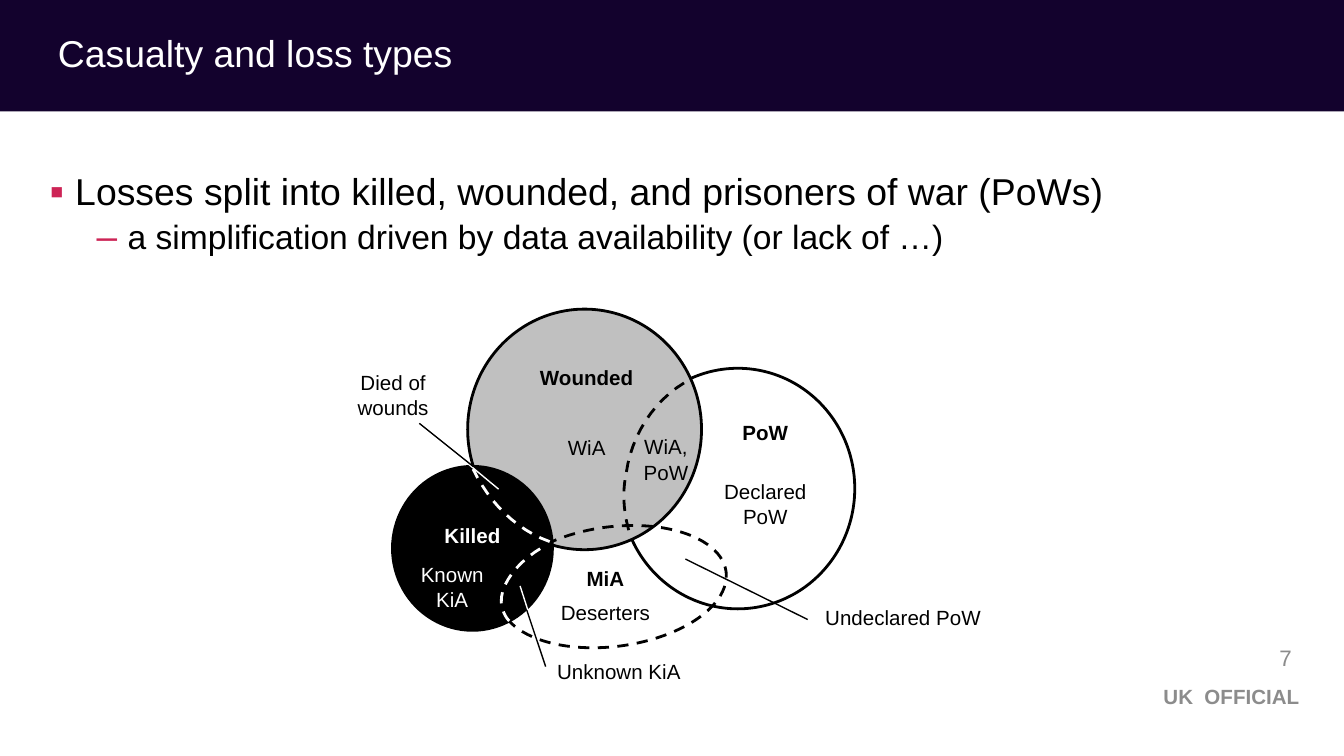
"""Build the slide on casualty and loss types with its overlapping sets."""
from lxml.etree import SubElement
from pptx import Presentation
from pptx.dml.color import RGBColor
from pptx.enum.dml import MSO_LINE
from pptx.enum.shapes import MSO_CONNECTOR, MSO_SHAPE
from pptx.enum.text import MSO_ANCHOR, PP_ALIGN
from pptx.oxml.ns import qn
from pptx.util import Inches, Pt

NAVY = RGBColor(0x13, 0x02, 0x2D)
CRIMSON = RGBColor(0xCD, 0x24, 0x56)
SILVER = RGBColor(0xC0, 0xC0, 0xC0)
GREY = RGBColor(0x8C, 0x8C, 0x8C)
BLACK = RGBColor(0, 0, 0)
WHITE = RGBColor(0xFF, 0xFF, 0xFF)

TITLE = {"size": Pt(20)}
NUMBER = {"size": Pt(12)}
LABEL = {"size": Pt(11)}
HEADING = {"size": Pt(11), "bold": True}
LABEL_SPACING = {"alignment": PP_ALIGN.CENTER, "line_spacing": Pt(13.5)}
RIGHT = {"alignment": PP_ALIGN.RIGHT}

BULLETS = [
    ("Losses split into killed, wounded, and prisoners of war (PoWs)",
     "▪", 0.19, -0.19, {"level": 0, "line_spacing": 0.9}, {"size": Pt(20)}),
    ("a simplification driven by data availability (or lack of …)",
     "–", 0.58, -0.23,
     {"level": 1, "line_spacing": 0.9, "space_before": Pt(3.8)}, {"size": Pt(18)}),
]

POW_SET = (4.62, 2.74, 1.74, 1.79)
WOUNDED_SET = (3.48, 2.3, 1.74, 1.79)
KILLED_SET = (2.92, 3.47, 1.19, 1.22)
MISSING_SET = (3.71, 3.92, 1.7, 0.89)

HIDDEN_EDGES = [
    (WHITE, (4.09, 4.03), [((3.84, 3.94), (3.64, 3.74), (3.52, 3.49))]),
    (BLACK, (5.09, 2.85), [((4.86, 2.99), (4.7, 3.24), (4.66, 3.52)),
                           ((4.63, 3.66), (4.64, 3.81), (4.68, 3.95))]),
    (WHITE, (3.79, 4.62), [((3.77, 4.6), (3.76, 4.58), (3.75, 4.56)),
                           ((3.68, 4.42), (3.8, 4.21), (4.04, 4.07))]),
]

LEADERS = [
    (WHITE, (3.12, 3.15), (3.71, 3.64)),
    (BLACK, (3.12, 3.15), (3.52, 3.47)),
    (BLACK, (5.1, 4.16), (6.01, 4.61)),
    (WHITE, (3.87, 4.36), (3.95, 4.61)),
    (BLACK, (4.06, 4.96), (3.92, 4.54)),
]

LABELS = [
    ("MiA", (4.19, 4.16, 0.63, 0.33), BLACK, HEADING),
    ("Wounded", (3.79, 2.66, 1.15, 0.33), BLACK, HEADING),
    ("Killed", (3.12, 3.84, 0.79, 0.33), WHITE, HEADING),
    ("PoW", (5.26, 3.07, 0.87, 0.33), BLACK, HEADING),
    ("Known KiA", (3.01, 4.13, 0.71, 0.57), WHITE, LABEL),
    ("WiA", (4.07, 3.18, 0.59, 0.28), BLACK, LABEL),
    ("WiA, PoW", (4.66, 3.18, 0.59, 0.53), BLACK, LABEL),
    ("Declared PoW", (5.26, 3.51, 0.87, 0.49), BLACK, LABEL),
    ("Undeclared PoW", (5.97, 4.45, 1.5, 0.28), BLACK, LABEL),
    ("Died of wounds", (2.53, 2.7, 0.79, 0.49), BLACK, LABEL),
    ("Deserters", (3.99, 4.41, 1.03, 0.28), BLACK, LABEL),
    ("Unknown KiA", (3.99, 4.85, 1.23, 0.28), BLACK, LABEL),
]


def apply_format(target, values):
    for name, value in values.items():
        setattr(target, name, value)


def write(para, text, color, font):
    span = para.add_run()
    span.text = text
    apply_format(span.font, {"name": "Arial", **font})
    span.font.color.rgb = color


def add_frame(page, place, frame_format=None):
    frame = page.shapes.add_textbox(*map(Inches, place)).text_frame
    apply_format(frame, {"word_wrap": True, **(frame_format or {})})
    return frame


def add_text(page, text, place, color, font, spacing, frame_format=None):
    para = add_frame(page, place, frame_format).paragraphs[0]
    apply_format(para, spacing)
    write(para, text, color, font)


def add_bullet(para, text, mark, margin, indent, spacing, font):
    properties = para._p.get_or_add_pPr()
    properties.set("marL", str(Inches(margin)))
    properties.set("indent", str(Inches(indent)))
    bullet_color = SubElement(properties, qn("a:buClr"))
    SubElement(bullet_color, qn("a:srgbClr"), val=str(CRIMSON))
    SubElement(properties, qn("a:buSzPct"), val="110000")
    SubElement(properties, qn("a:buFont"), typeface="Arial")
    SubElement(properties, qn("a:buChar"), char=mark)
    apply_format(para, spacing)
    write(para, text, BLACK, font)


def add_bullets(page):
    margins = {"margin_left": Inches(0.09), "margin_right": Inches(0.09)}
    frame = add_frame(page, (0.28, 1.24, 9.44, 4.09), margins)
    for index, bullet in enumerate(BULLETS):
        para = frame.add_paragraph() if index else frame.paragraphs[0]
        add_bullet(para, *bullet)


def paint(shape, fill=None, line=None, dashed=False):
    shape.shadow.inherit = False
    if fill is None:
        shape.fill.background()
    else:
        shape.fill.solid()
        shape.fill.fore_color.rgb = fill
    if line is None:
        shape.line.fill.background()
    else:
        shape.line.color.rgb = line
        shape.line.width = Pt(1.5)
    if dashed:
        shape.line.dash_style = MSO_LINE.DASH


def add_set(page, place, fill=None, rotation=0, dashed=False):
    oval = page.shapes.add_shape(MSO_SHAPE.OVAL, *map(Inches, place))
    oval.rotation = rotation
    paint(oval, fill, BLACK, dashed)


def curve_points(start, curve, steps=12):
    points = []
    for step in range(1, steps + 1):
        t = step / steps
        weights = ((1 - t) ** 3, 3 * t * (1 - t) ** 2, 3 * t * t * (1 - t), t ** 3)
        points.append(tuple(Inches(sum(weight * value for weight, value in zip(weights, axis)))
                            for axis in zip(start, *curve)))
    return points


def add_hidden_edge(page, color, start, curves):
    builder = page.shapes.build_freeform(*map(Inches, start))
    for curve in curves:
        builder.add_line_segments(curve_points(start, curve), close=False)
        start = curve[-1]
    paint(builder.convert_to_shape(), line=color, dashed=True)


def add_leader(page, color, start, end):
    leader = page.shapes.add_connector(MSO_CONNECTOR.STRAIGHT, *map(Inches, start + end))
    leader.line.color.rgb = color
    leader.line.width = Pt(0.75)
    SubElement(leader._element.spPr, qn("a:effectLst"))


def add_diagram(page):
    add_set(page, POW_SET)
    add_set(page, WOUNDED_SET, SILVER)
    add_set(page, KILLED_SET, BLACK)
    add_set(page, MISSING_SET, rotation=352.5, dashed=True)
    for edge in HIDDEN_EDGES:
        add_hidden_edge(page, *edge)
    for leader in LEADERS:
        add_leader(page, *leader)
    for label in LABELS:
        add_text(page, *label, LABEL_SPACING)


def main():
    deck = Presentation()
    deck.slide_width = Inches(10)
    deck.slide_height = deck.slide_width * 9 // 16
    page = deck.slides.add_slide(deck.slide_layouts[6])
    banner = page.shapes.add_shape(MSO_SHAPE.RECTANGLE, 0, 0, deck.slide_width, Inches(0.83))
    paint(banner, NAVY)
    middle = {"vertical_anchor": MSO_ANCHOR.MIDDLE}
    add_text(page, "Casualty and loss types", (0.04, 0.06, 7.48, 0.71), WHITE, TITLE,
             {"line_spacing": 0.9}, {**middle, "margin_left": Inches(0.39)})
    add_bullets(page)
    add_diagram(page)
    add_text(page, "7", (7.46, 4.78, 2.25, 0.23), GREY, NUMBER, RIGHT, middle)
    add_text(page, "UK  OFFICIAL", (6.73, 5.03, 2.98, 0.3), GREY, HEADING, RIGHT,
             {**middle, "margin_right": Inches(0.04)})
    deck.save("out.pptx")


if __name__ == "__main__":
    main()
